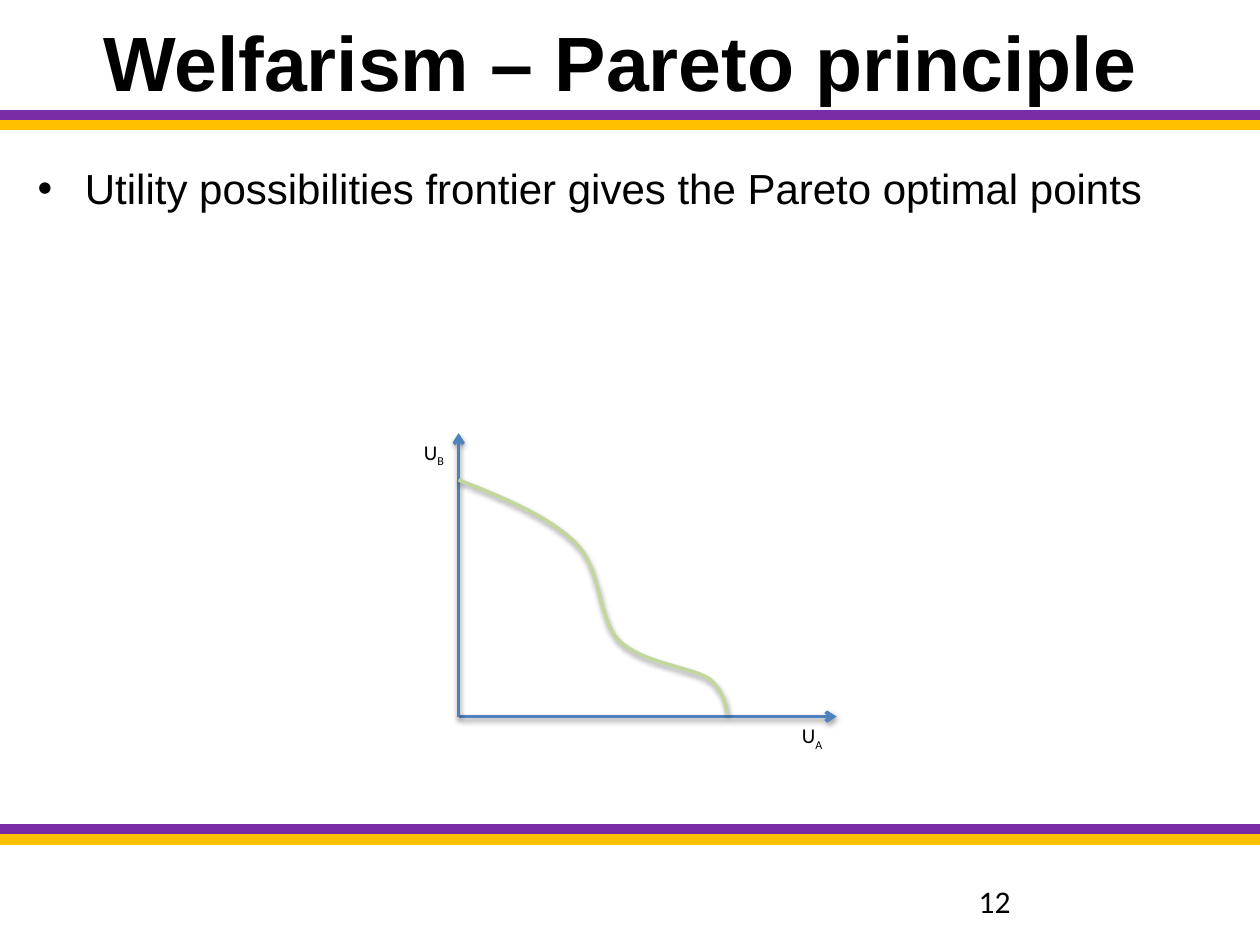
from pptx import Presentation
from pptx.dml.color import RGBColor
from pptx.enum.shapes import MSO_CONNECTOR
from pptx.enum.text import MSO_ANCHOR, PP_ALIGN
from pptx.oxml import parse_xml
from pptx.oxml.ns import nsdecls
from pptx.util import Pt

HUES = {"purple": "7A2CA6", "gold": "FFC000", "axis": "4F81BD",
        "curve": "C3D69B", "text": "000000"}

# Utility frontier: start point, then control, control, end for each bend
START = (262.1, 274.3)
BENDS = [
    [(288, 284.4), (313.9, 295.2), (329, 310.3)],
    [(344.2, 325.4), (341.3, 352.8), (353.5, 365.8)],
    [(366.5, 378.7), (393.8, 380.9), (404.6, 387.4)],
    [(414.7, 394.6), (415.4, 407.5), (415.4, 407.5)],
]
STEPS = 16


def color(name):
    return RGBColor.from_string(HUES[name])


def add_fx(shape, shade):
    fx = parse_xml(f"<a:effectLst {nsdecls('a')}/>")
    if shade:
        fx.append(parse_xml(
            f'<a:outerShdw {nsdecls("a")} blurRad="{Pt(3.1)}" dist="{Pt(1.6)}" '
            'dir="5400000" rotWithShape="0"><a:srgbClr val="000000">'
            '<a:alpha val="38000"/></a:srgbClr></a:outerShdw>'))
    shape._element.spPr.append(fx)


def add_line(slide, ends, hue, width, arrow=False):
    line = slide.shapes.add_connector(
        MSO_CONNECTOR.STRAIGHT, *[Pt(v) for v in ends])
    line.line.color.rgb = color(hue)
    line.line.width = Pt(width)
    if arrow:
        line.line._get_or_add_ln().append(
            parse_xml(f'<a:tailEnd {nsdecls("a")} type="arrow"/>'))
    add_fx(line, arrow)


def add_text(slide, box, text, size, font="Arial", wrap=True):
    frame = slide.shapes.add_textbox(*[Pt(v) for v in box]).text_frame
    frame.word_wrap = wrap
    frame.text = text
    para = frame.paragraphs[0]
    style(para.runs[0], size, font)
    return frame, para


def style(run, size, font):
    run.font.size = Pt(size)
    run.font.name = font
    run.font.color.rgb = color("text")


def add_label(slide, left, top, sub):
    para = add_text(slide, (left, top, 27, 27), "U", 12, "Calibri", False)[1]
    run = para.add_run()
    run.text = sub
    style(run, 12, "Calibri")
    run.font._element.set("baseline", "-25000")


def add_bullet(para, indent):
    props = para._p.get_or_add_pPr()
    props.set("marL", str(Pt(indent)))
    props.set("indent", str(-Pt(indent)))
    props.append(parse_xml(f'<a:buFont {nsdecls("a")} typeface="Arial"/>'))
    props.append(parse_xml(f'<a:buChar {nsdecls("a")} char="•"/>'))


def bend(ends, t):
    parts = ((1 - t) ** 3, 3 * t * (1 - t) ** 2, 3 * t * t * (1 - t), t ** 3)
    return tuple(Pt(sum(k * p[i] for k, p in zip(parts, ends)))
                 for i in (0, 1))


def add_curve(slide):
    dots, last = [], START
    for rest in BENDS:
        dots += [bend([last, *rest], n / STEPS) for n in range(1, STEPS + 1)]
        last = rest[-1]
    pen = slide.shapes.build_freeform(Pt(START[0]), Pt(START[1]))
    pen.add_line_segments(dots, close=False)
    curve = pen.convert_to_shape()
    curve.fill.background()
    curve.line.color.rgb = color("curve")
    curve.line.width = Pt(2)
    add_fx(curve, True)


def main():
    deck = Presentation()
    deck.slide_width, deck.slide_height = Pt(720), Pt(540)
    slide = deck.slides.add_slide(deck.slide_layouts[6])

    # Double rules above and below the body
    for top in (65.6, 474):
        add_line(slide, (0, top, 720, top), "purple", 6)
        add_line(slide, (0, top + 5.75, 720, top + 5.75), "gold", 6)

    # Title, bullet and page number
    frame, para = add_text(slide, (14.4, 15.1, 680.4, 38.9),
                           "Welfarism – Pareto principle", 44)
    frame.vertical_anchor = MSO_ANCHOR.MIDDLE
    para.alignment = PP_ALIGN.CENTER
    para.runs[0].font.bold = True
    para = add_text(
        slide, (14.4, 89.3, 691.9, 356.4),
        "Utility possibilities frontier gives the Pareto optimal points", 24)[1]
    add_bullet(para, 27)
    add_text(slide, (552.2, 500.4, 167.8, 28.8), "12", 18, "Calibri")

    # Axes, frontier and axis labels
    left, base = 262.1, 409.5
    add_line(slide, (left, base, left + 216, base), "axis", 2, True)
    add_line(slide, (left, base, left, base - 162), "axis", 2, True)
    add_curve(slide)
    add_label(slide, left + 189, base, "A")
    add_label(slide, left - 27, base - 162, "B")

    deck.save("out.pptx")


if __name__ == "__main__":
    main()
